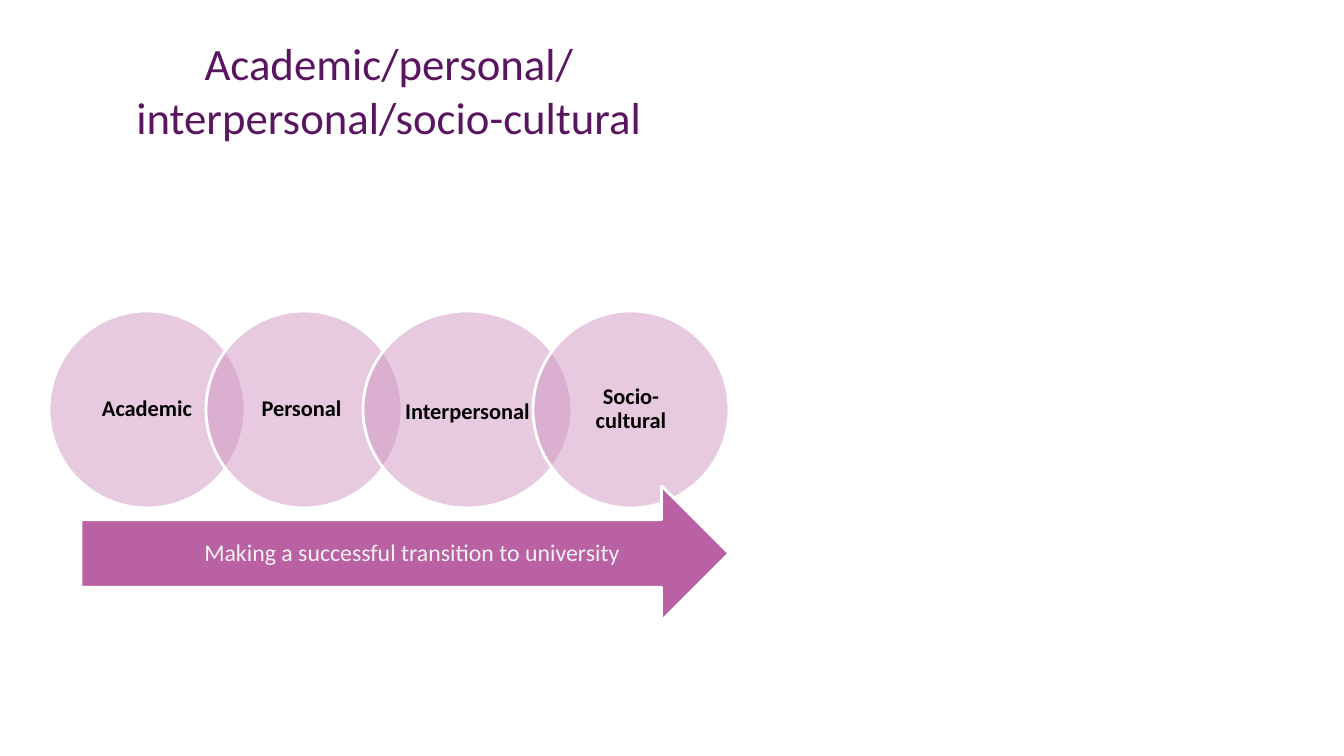
from dataclasses import dataclass

from lxml import etree
from pptx import Presentation
from pptx import util as u
from pptx.dml.color import RGBColor
from pptx.enum import shapes, text
from pptx.oxml.ns import qn

TITLE = ["Academic/personal/", "interpersonal/socio-cultural"]
CIRCLES = [
    {"label": "Academic", "width": 196, "left": 8, "top": 0, "right": 8},
    {"label": "Personal", "width": 196, "left": 8, "top": 0, "right": 13},
    {"label": "Interpersonal", "width": 209, "left": 8, "top": 6, "right": 8},
    {"label": "Socio-cultural", "width": 196, "left": 8, "top": 0, "right": 8},
]
GOAL = "Making a successful transition to university"

PAGE_SIZE = (1344, 756)
TITLE_BOX = (49, 36, 680, 182)
ARROW_BOX = (81, 486, 648, 135)
CIRCLE_LEFT, CIRCLE_TOP, CIRCLE_HEIGHT, OVERLAP = 49, 311, 197, 39


@dataclass(frozen=True)
class Theme:
    font: str = "Calibri"
    title: str = "59155F"
    circle: str = "D196C2"
    arrow: str = "BA61A4"
    outline: str = "FFFFFF"
    label: str = "000000"
    goal: str = "F2F2F2"
    title_size: int = 32
    label_size: int = 16
    goal_size: int = 17
    outline_width: int = 2
    circle_opacity: int = 50


THEME = Theme()


def px(length):
    return u.Emu(round(length * 914400 / 100.8))


def write(box, lines, size, color, bold=False, insets=(0, 0, 0, 0), spacing=1.0,
          anchor=text.MSO_ANCHOR.MIDDLE):
    frame = box.text_frame
    frame.word_wrap = True
    frame.vertical_anchor = anchor
    frame.margin_left, frame.margin_top, frame.margin_right, frame.margin_bottom = map(px, insets)
    para = frame.paragraphs[0]
    para.alignment = text.PP_ALIGN.CENTER
    para.line_spacing = spacing
    for index, line in enumerate(lines):
        if index:
            para.add_line_break()
        span = para.add_run()
        span.text = line
        span.font.name = THEME.font
        span.font.size = u.Pt(size)
        span.font.bold = bold
        span.font.color.rgb = RGBColor.from_string(color)


def add_figure(page, kind, bounds, color, opacity=100):
    figure = page.shapes.add_shape(kind, *map(px, bounds))
    figure.shadow.inherit = False
    figure.fill.solid()
    figure.fill.fore_color.rgb = RGBColor.from_string(color)
    figure.line.color.rgb = RGBColor.from_string(THEME.outline)
    figure.line.width = u.Pt(THEME.outline_width)
    if opacity < 100:
        shade = figure.fill._xPr.find(qn("a:solidFill"))[0]
        etree.SubElement(shade, qn("a:alpha")).set("val", str(opacity * 1000))
    return figure


def main():
    deck = Presentation()
    deck.slide_width, deck.slide_height = map(px, PAGE_SIZE)
    page = deck.slides.add_slide(deck.slide_layouts[6])

    title = page.shapes.add_textbox(*map(px, TITLE_BOX))
    write(title, TITLE, THEME.title_size, THEME.title, anchor=text.MSO_ANCHOR.TOP)

    left = CIRCLE_LEFT
    for item in CIRCLES:
        bounds = (left, CIRCLE_TOP, item["width"], CIRCLE_HEIGHT)
        circle = add_figure(page, shapes.MSO_SHAPE.OVAL, bounds, THEME.circle,
                            THEME.circle_opacity)
        write(circle, [item["label"]], THEME.label_size, THEME.label, bold=True,
              insets=(item["left"], item["top"], item["right"], 0), spacing=0.9)
        left += item["width"] - OVERLAP

    arrow = add_figure(page, shapes.MSO_SHAPE.RIGHT_ARROW, ARROW_BOX, THEME.arrow)
    write(arrow, [GOAL], THEME.goal_size, THEME.goal, insets=(53, 0, 5, 0), spacing=0.9)

    deck.save("out.pptx")


if __name__ == "__main__":
    main()
